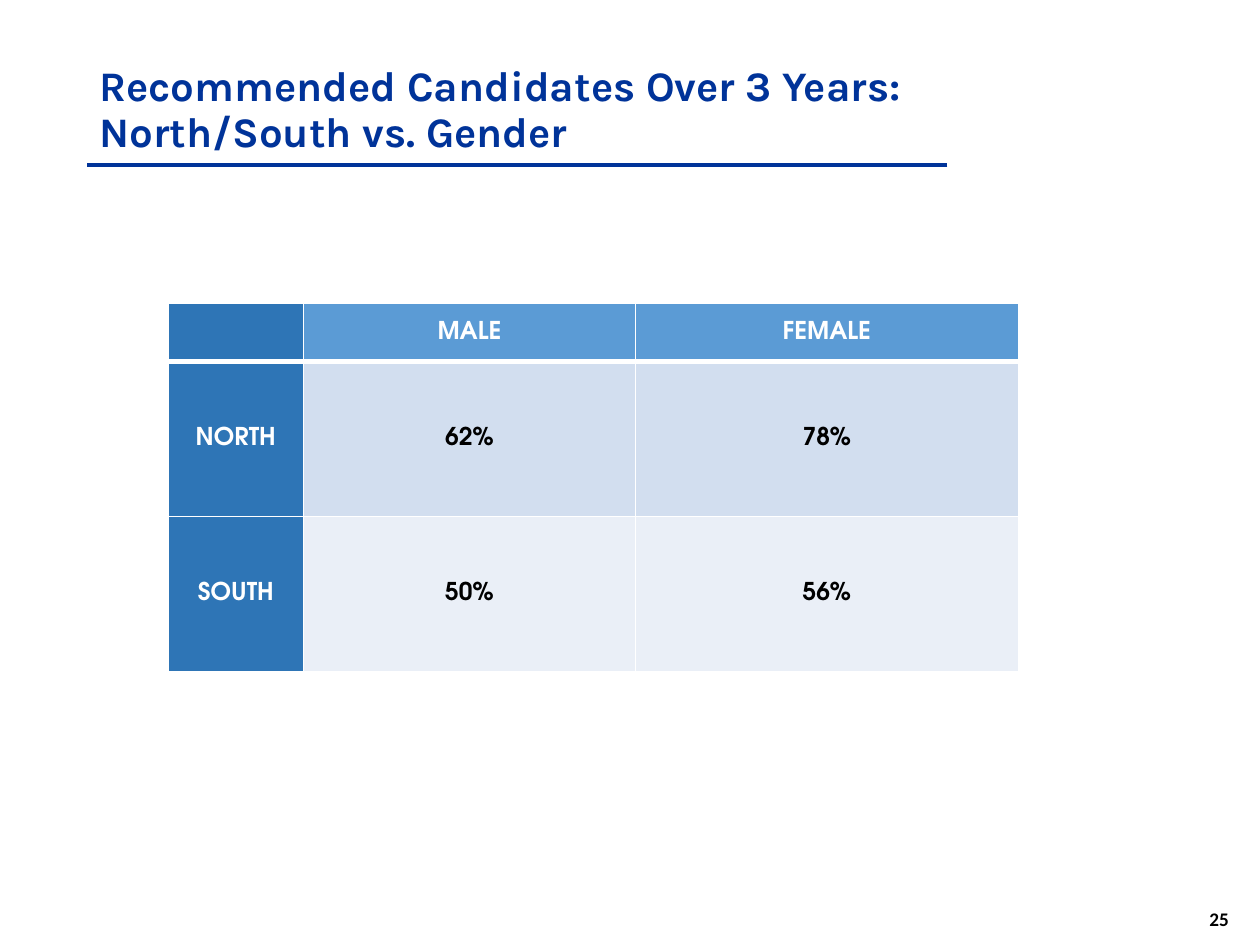
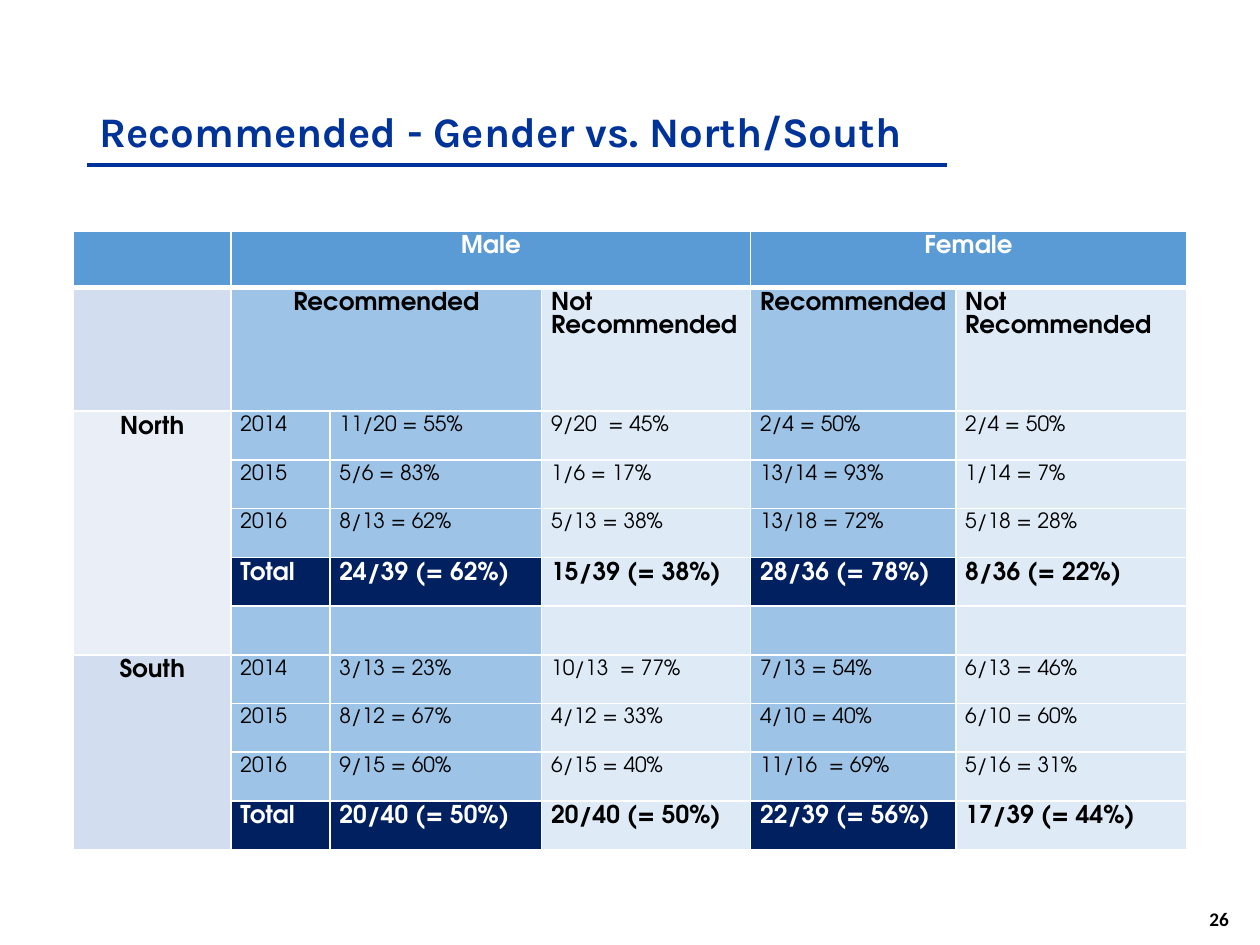
from dataclasses import dataclass

from lxml import etree
from pptx import Presentation
from pptx import util as u
from pptx.dml.color import RGBColor
from pptx.enum import shapes, text
from pptx.oxml import ns

NAVY, WHITE, BLACK = "003399", "FFFFFF", "000000"
HEADER, SIDE, TOTAL = "5B9BD5", "2E75B6", "002060"
BAND_DARK, BAND_LIGHT = "D2DEEF", "EAEFF7"
RECOMMENDED, NOT_RECOMMENDED = "9DC3E6", "DEEBF7"
TITLE_FONT, TABLE_FONT, NUMBER_FONT = "Karla", "TeX Gyre Adventor", "Calibri"
CENTER, LEFT = text.PP_ALIGN.CENTER, text.PP_ALIGN.LEFT


def color(value):
    return RGBColor.from_string(value)


@dataclass
class CellLook:
    fill: str
    ink: str = BLACK
    size: float = 14
    bold: bool = True
    align: text.PP_ALIGN = CENTER


class Deck:
    def __init__(self):
        self.presentation = Presentation()
        self.presentation.slide_width = u.Pt(720)
        self.presentation.slide_height = u.Pt(540)
        self.slide = None

    def add_slide(self, title, number):
        """Start a slide with the shared title, rule and page number."""
        layout = self.presentation.slide_layouts[6]
        self.slide = self.presentation.slides.add_slide(layout)
        self.textbox(number, 684, 514.8, 27.4, 20.9, NUMBER_FONT, 11, BLACK, wrap=False)
        self.rule(49.7, 541.4, 94.4)
        frame = self.textbox(title, 49.7, 28.8, 620.6, 64.1, TITLE_FONT, 24, NAVY)
        frame.vertical_anchor = text.MSO_ANCHOR.BOTTOM
        frame.paragraphs[0].line_spacing = 0.9

    def set_text(self, paragraph, content, font, size, ink, bold=True):
        paragraph.text = content
        paragraph.font.name = font
        paragraph.font.size = u.Pt(size)
        paragraph.font.bold = bold
        paragraph.font.color.rgb = color(ink)

    def textbox(self, content, left, top, width, height, font, size, ink, wrap=True):
        box = self.slide.shapes.add_textbox(u.Pt(left), u.Pt(top), u.Pt(width), u.Pt(height))
        box.text_frame.word_wrap = wrap
        self.set_text(box.text_frame.paragraphs[0], content, font, size, ink)
        return box.text_frame

    def rule(self, left, right, top):
        line = self.slide.shapes.add_connector(
            shapes.MSO_CONNECTOR.STRAIGHT, u.Pt(right), u.Pt(top), u.Pt(left), u.Pt(top))
        line.line.color.rgb = color(NAVY)
        line.line.width = u.Pt(2)
        etree.SubElement(line._element.spPr, ns.qn("a:effectLst"))

    def borders(self, cell, row):
        """White cell borders, heavier under the header row."""
        widths = {"L": 1, "R": 1, "T": 3 if row == 1 else 1, "B": 3 if row == 0 else 1}
        properties = cell._tc.get_or_add_tcPr()
        for side, width in widths.items():
            line = etree.SubElement(properties, ns.qn(f"a:ln{side}"), w=str(u.Pt(width)))
            fill = etree.SubElement(line, ns.qn("a:solidFill"))
            etree.SubElement(fill, ns.qn("a:srgbClr"), val=WHITE)

    def table(self, left, top, widths, heights, rows, look, anchor, merges=()):
        """Draw rows of text; look(row, column) gives the style of each cell."""
        table = self.slide.shapes.add_table(
            len(heights), len(widths), u.Pt(left), u.Pt(top),
            u.Pt(sum(widths)), u.Pt(sum(heights))).table
        table.first_row = table.horz_banding = False
        for column, width in zip(table.columns, widths):
            column.width = u.Pt(width)
        for row, height in zip(table.rows, heights):
            row.height = u.Pt(height)
        for r, contents in enumerate(rows):
            for c, content in enumerate(contents):
                cell, style = table.cell(r, c), look(r, c)
                self.borders(cell, r)
                cell.fill.solid()
                cell.fill.fore_color.rgb = color(style.fill)
                cell.vertical_anchor = anchor
                cell.margin_left = cell.margin_right = u.Pt(5.4)
                cell.margin_top = cell.margin_bottom = u.Pt(2.7 if content else 0)
                paragraph = cell.text_frame.paragraphs[0]
                paragraph.alignment = style.align
                self.set_text(paragraph, content, TABLE_FONT, style.size, style.ink, style.bold)
        for first, last in merges:
            table.cell(*first).merge(table.cell(*last))


def summary_look(row, column):
    if column == 0:
        return CellLook(SIDE, WHITE)
    if row == 0:
        return CellLook(HEADER, WHITE)
    return CellLook(BAND_DARK if row == 1 else BAND_LIGHT)


def detail_look(row, column):
    recommended = column in (1, 2, 4)
    if row == 0:
        return CellLook(HEADER, WHITE)
    if column == 0:
        return CellLook(BAND_LIGHT if 2 <= row <= 6 else BAND_DARK)
    fill = RECOMMENDED if recommended else NOT_RECOMMENDED
    if row == 1:
        return CellLook(fill, align=CENTER if recommended else LEFT)
    if row in (5, 10):
        if recommended:
            return CellLook(TOTAL, WHITE, align=LEFT)
        return CellLook(fill, align=LEFT)
    return CellLook(fill, size=12, bold=False, align=LEFT)


def main():
    deck = Deck()

    # Summary by region and gender
    deck.add_slide("Recommended Candidates Over 3 Years:\nNorth/South vs. Gender", "25")
    summary = [
        ["", "MALE", "FEMALE"],
        ["NORTH", "62%", "78%"],
        ["SOUTH", "50%", "56%"],
    ]
    deck.table(96, 173.5, [77.5, 189.5, 219], [33, 88.6, 88.6], summary,
               summary_look, text.MSO_ANCHOR.MIDDLE)

    # Yearly detail
    deck.add_slide("Recommended - Gender vs. North/South", "26")
    detail = [
        ["", "Male", "", "", "Female", ""],
        ["", "Recommended", "", "Not Recommended", "Recommended", "Not Recommended"],
        ["North", "2014", "11/20 = 55%", "9/20  = 45%", "2/4 = 50%", "2/4 = 50%"],
        ["", "2015", "5/6 = 83%", "1/6 = 17%", "13/14 = 93%", "1/14 = 7%"],
        ["", "2016", "8/13 = 62%", "5/13 = 38%", "13/18 = 72%", "5/18 = 28%"],
        ["", "Total", "24/39 (= 62%)", "15/39 (= 38%)", "28/36 (= 78%)", "8/36 (= 22%)"],
        ["", "", "", "", "", ""],
        ["South", "2014", "3/13 = 23%", "10/13  = 77%", "7/13 = 54%", "6/13 = 46%"],
        ["", "2015", "8/12 = 67%", "4/12 = 33%", "4/10 = 40%", "6/10 = 60%"],
        ["", "2016", "9/15 = 60%", "6/15 = 40%", "11/16  = 69%", "5/16 = 31%"],
        ["", "Total", "20/40 (= 50%)", "20/40 (= 50%)", "22/39 (= 56%)", "17/39 (= 44%)"],
    ]
    merges = [((0, 1), (0, 3)), ((0, 4), (0, 5)), ((1, 1), (1, 2)),
              ((2, 0), (6, 0)), ((7, 0), (10, 0))]
    deck.table(42, 132, [90, 56.6, 121, 119.4, 117.2, 131.8],
               [32.4, 70.6] + [27.86] * 9, detail,
               detail_look, text.MSO_ANCHOR.TOP, merges)

    deck.presentation.save("out.pptx")


if __name__ == "__main__":
    main()
